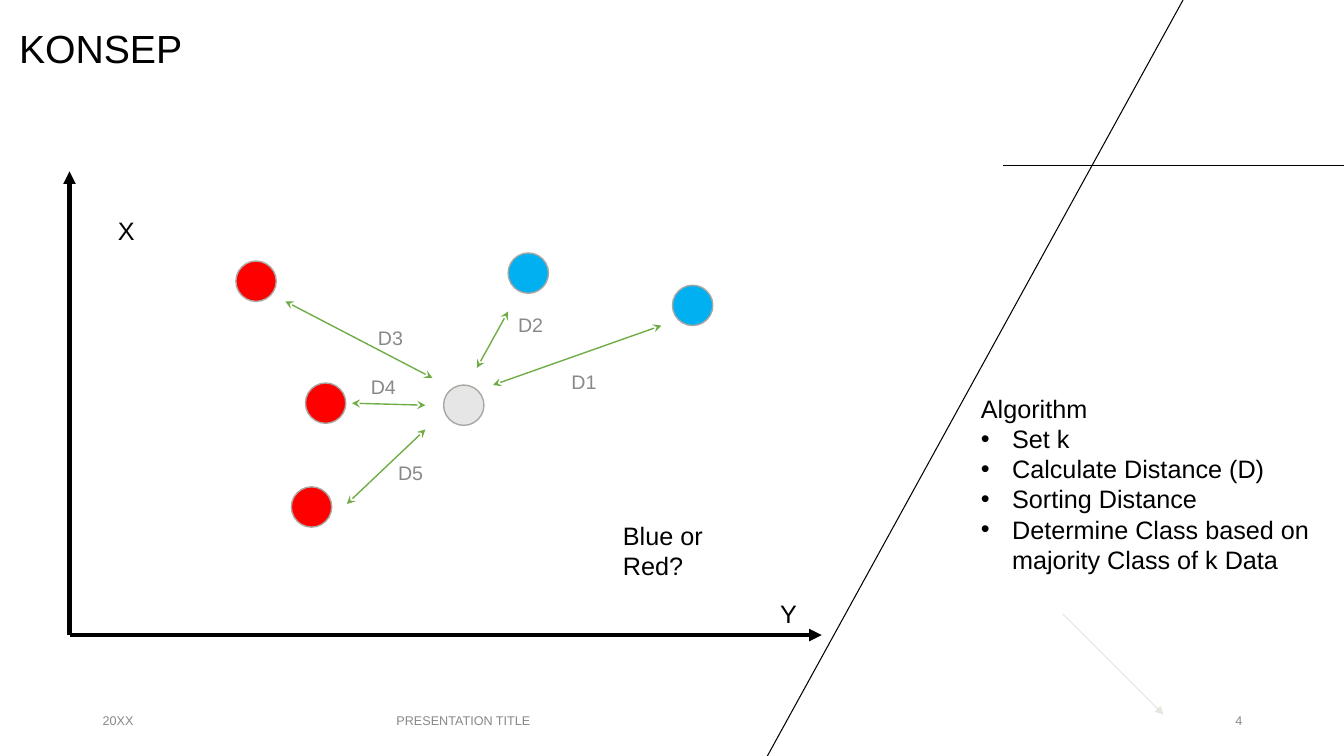
import pptx
import pptx.util
import pptx.dml.color
import pptx.enum.shapes
import pptx.enum.text
import pptx.oxml.ns
import lxml.etree

Inches = pptx.util.Inches
Pt = pptx.util.Pt
ALIGN = pptx.enum.text.PP_ALIGN
ANCHOR = pptx.enum.text.MSO_ANCHOR

BLACK, GREEN, RED, BLUE = "000000", "70AD47", "FF0000", "00B0F0"
LIGHT_GREY, OUTLINE, FOOTER, LABEL, PALE = "E7E6E6", "AAA7A2", "888888", "898989", "E9E6DF"


def color(hex_text):
    return pptx.dml.color.RGBColor.from_string(hex_text)


def add_xml(parent, tag, **attributes):
    return lxml.etree.SubElement(parent, pptx.oxml.ns.qn(tag), **attributes)


class Deck:
    """Holds the font and the current slide."""

    font = "Arial"
    dot_size = 0.4

    def __init__(self):
        self.presentation = pptx.Presentation()
        self.presentation.slide_width = Inches(13.33)
        self.presentation.slide_height = Inches(7.5)
        self.slide = self.presentation.slides.add_slide(self.presentation.slide_layouts[6])

    def line(self, start, end, hex_text, width, head=None, tail=None):
        connector = self.slide.shapes.add_connector(
            pptx.enum.shapes.MSO_CONNECTOR.STRAIGHT, *map(Inches, (*start, *end)))
        connector.line.color.rgb = color(hex_text)
        connector.line.width = Pt(width)
        outline = connector.line._get_or_add_ln()
        for tag, arrow in (("a:headEnd", head), ("a:tailEnd", tail)):
            if arrow:
                add_xml(outline, tag, type=arrow)
        add_xml(connector._element.spPr, "a:effectLst")

    def dot(self, left, top, hex_text):
        size = Inches(self.dot_size)
        dot = self.slide.shapes.add_shape(
            pptx.enum.shapes.MSO_SHAPE.OVAL, Inches(left), Inches(top), size, size)
        dot.shadow.inherit = False
        dot.fill.solid()
        dot.fill.fore_color.rgb = color(hex_text)
        dot.line.color.rgb = color(OUTLINE)
        dot.line.width = Pt(1)

    def text(self, words, box, size=18, hex_text=BLACK, align=ALIGN.LEFT, anchor=ANCHOR.TOP):
        frame = self.slide.shapes.add_textbox(*map(Inches, box)).text_frame
        frame.word_wrap = True
        frame.vertical_anchor = anchor
        frame.text = words
        for paragraph in frame.paragraphs:
            paragraph.alignment = align
            for run in paragraph.runs:
                run.font.name = self.font
                run.font.size = Pt(size)
                run.font.color.rgb = color(hex_text)
        return frame

    def bullet(self, paragraph):
        properties = paragraph._p.get_or_add_pPr()
        indent = Inches(0.31)
        properties.set("marL", str(indent))
        properties.set("indent", str(-indent))
        add_xml(add_xml(properties, "a:buClr"), "a:srgbClr", val=BLACK)
        add_xml(properties, "a:buFont", typeface=self.font)
        add_xml(properties, "a:buChar", char="•")


def main():
    deck = Deck()

    # Background lines
    deck.line((9.95, 1.64), (13.33, 1.64), BLACK, 0.75)
    deck.line((11.75, -0.03), (7.6, 7.52), BLACK, 0.75)

    # Title
    title = deck.text("KONSEP", (0.09, -0.56, 5.59, 1.32), 28, anchor=ANCHOR.BOTTOM)
    title.paragraphs[0].line_spacing = 0.9

    # Footer
    for words, left, width, align in (
            ("20XX", 0.92, 1.33, ALIGN.LEFT),
            ("PRESENTATION TITLE", 2.69, 3.81, ALIGN.CENTER),
            ("4", 9.42, 3, ALIGN.RIGHT)):
        deck.text(words, (left, 6.95, width, 0.4), 9, FOOTER, align, ANCHOR.MIDDLE)

    # Data points, with the unknown one in grey
    for left, top, fill in (
            (2.34, 2.59, RED), (2.89, 4.83, RED), (3.03, 3.8, RED),
            (5.04, 2.51, BLUE), (6.67, 2.83, BLUE), (4.4, 3.82, LIGHT_GREY)):
        deck.dot(left, top, fill)

    # Axes
    origin = (0.69, 6.3)
    for name, tip, corner in (
            ("X", (0.69, 1.7), (1.07, 2.09)),
            ("Y", (8.15, 6.3), (7.64, 5.89))):
        deck.line(tip, origin, BLACK, 3, head="triangle")
        deck.text(name, (*corner, 0.34, 0.4))

    # Distances from the unknown point
    for name, start, end, corner in (
            ("D2", (4.73, 3.65), (5.04, 3.09), (5.04, 3.06)),
            ("D1", (4.89, 3.82), (6.56, 3.23), (5.57, 3.62)),
            ("D3", (4.29, 3.75), (2.83, 2.99), (3.65, 3.18)),
            ("D4", (4.22, 4.02), (3.49, 4), (3.58, 3.67)),
            ("D5", (4.22, 4.26), (3.44, 5), (3.85, 4.52))):
        deck.line(start, end, GREEN, 1, head="stealth", tail="stealth")
        deck.text(name, (*corner, 0.53, 0.34), 14, LABEL)

    # Question and pale arrow
    deck.text("Blue or Red?", (6.08, 5.11, 1.56, 0.4))
    deck.line((10.54, 6.09), (11.54, 7.09), PALE, 0.75, tail="triangle")

    # Algorithm steps
    steps = ("Set k", "Calculate Distance (D)", "Sorting Distance",
             "Determine Class based on majority Class of k Data")
    algorithm = deck.text("\n".join(("Algorithm", *steps)), (9.63, 3.85, 3.75, 2.52))
    for step in algorithm.paragraphs[1:]:
        deck.bullet(step)

    deck.presentation.save("out.pptx")


if __name__ == "__main__":
    main()
